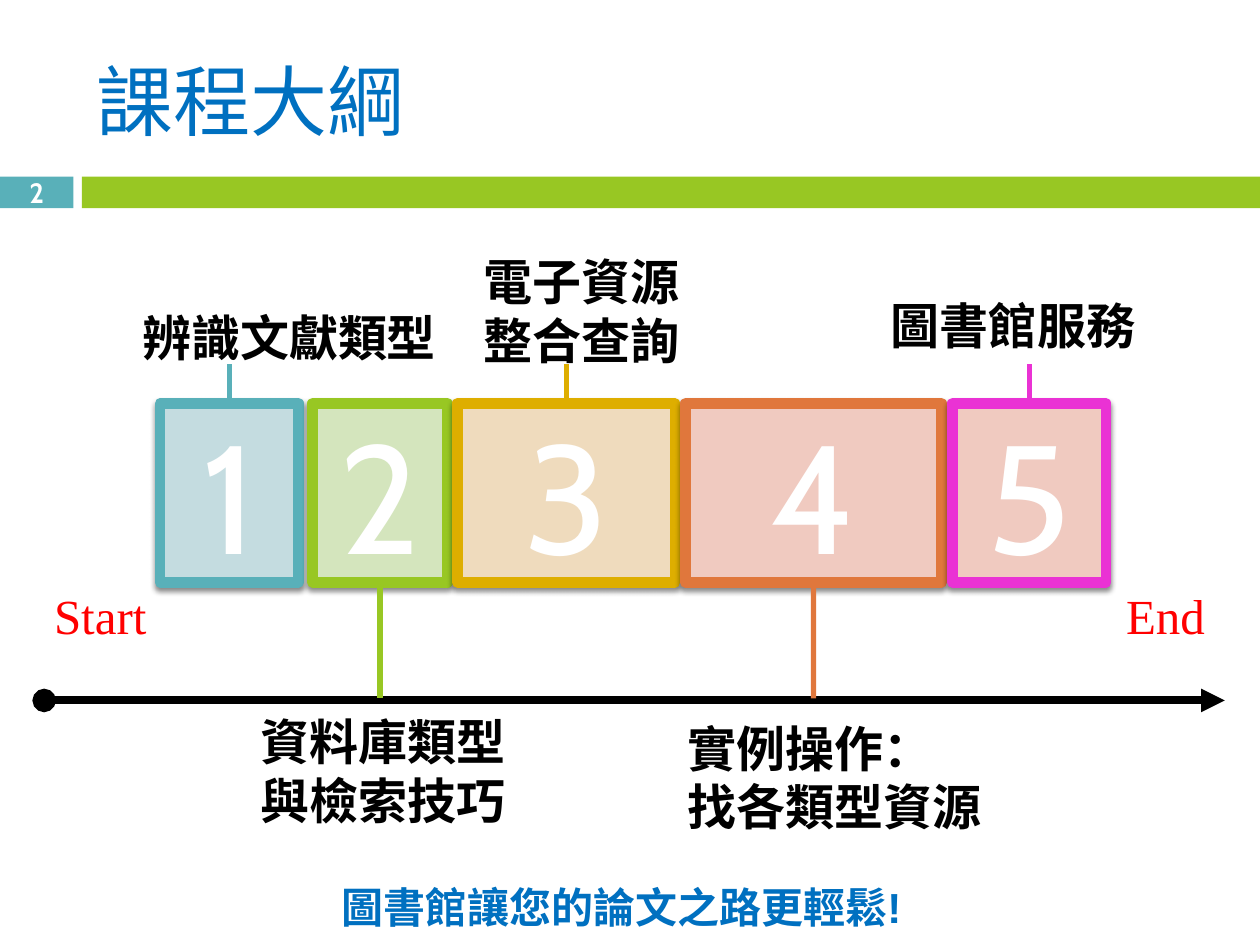
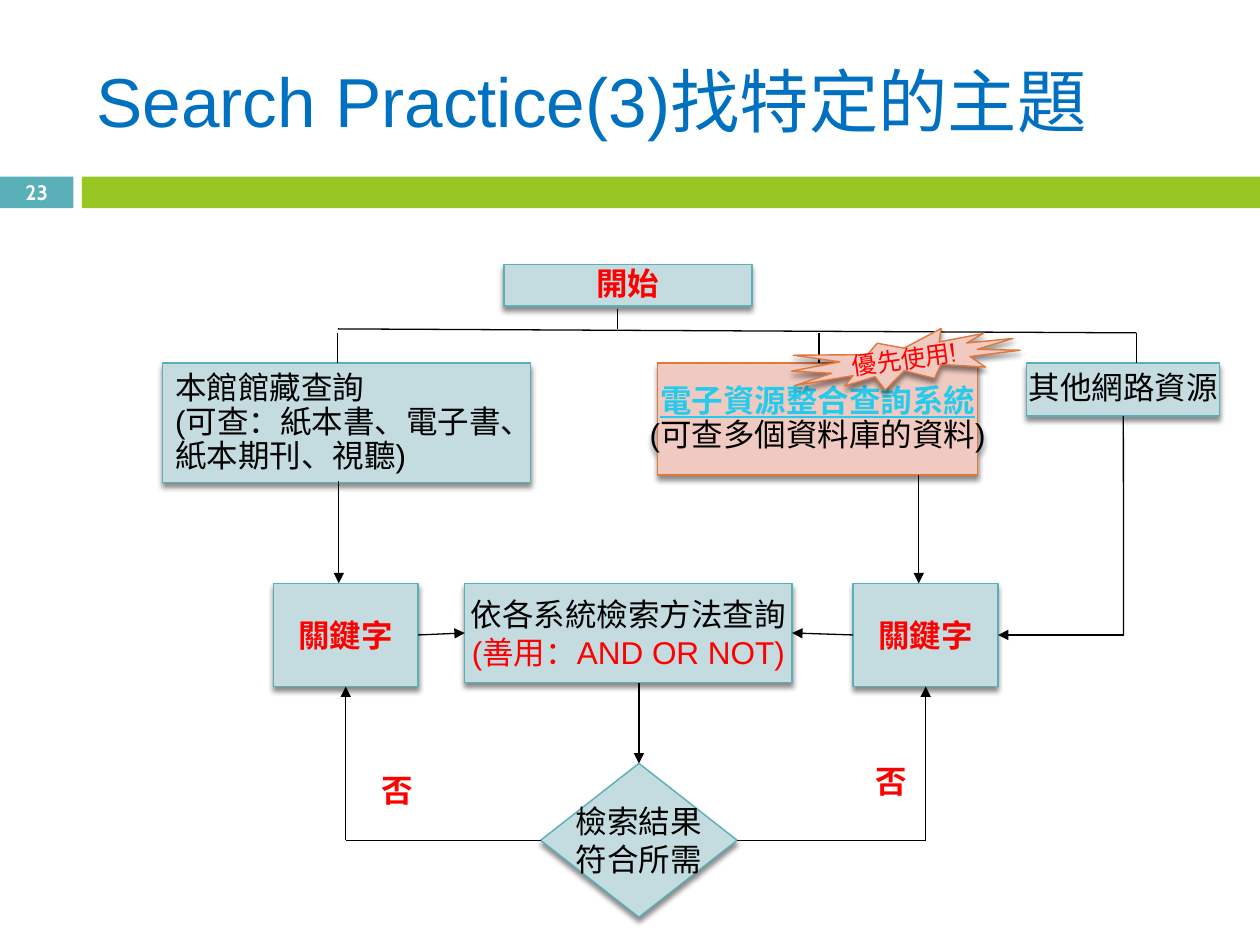
"""Build the course outline slide and the topic search flowchart slide."""
from lxml.etree import SubElement
from pptx import Presentation
from pptx.dml.color import RGBColor as RGB
from pptx.enum.shapes import MSO_CONNECTOR as CONN, MSO_SHAPE as SHAPE
from pptx.enum.text import MSO_ANCHOR as ANCHOR, MSO_AUTO_SIZE as AUTO, PP_ALIGN as ALIGN
from pptx.oxml.ns import qn
from pptx.util import Cm, Pt

C = {
    "black": "000000", "white": "FFFFFF", "red": "FF0000", "blue": "0070C0",
    "teal": "59B0B9", "green": "98C723", "gold": "DEAE00", "orange": "E0773C",
    "magenta": "EA32D4", "link": "26CBEC", "pale_teal": "C4DCE0",
    "pale_green": "D4E5BD", "pale_gold": "EFDBBD", "pale_orange": "F0CAC0",
}
CJK = "Noto Sans CJK SC"


def add_text(s, text, x, y, w, h, geom=None, fill=None, line=None, width=0.79,
             shadow=True, size=18, font="Arial", color="black", bold=False,
             align=ALIGN.LEFT, anchor=ANCHOR.MIDDLE, spacing=None,
             wrap=True, grow=False):
    box = Cm(x), Cm(y), Cm(w), Cm(h)
    if geom is None:
        sp = s.shapes.add_textbox(*box)
    else:
        sp = s.shapes.add_shape(geom, *box)
        sp.fill.solid()
        sp.fill.fore_color.rgb = RGB.from_string(C[fill])
        sp.shadow.inherit = False
        if line:
            sp.line.color.rgb = RGB.from_string(C[line])
            sp.line.width = Pt(width)
        else:
            sp.line.fill.background()
        if shadow:
            effects = sp.element.spPr.find(qn("a:effectLst"))
            outer = SubElement(effects, qn("a:outerShdw"), blurRad=str(Pt(3)),
                               dist=str(Pt(2.4)), dir="5400000", rotWithShape="0")
            tint = SubElement(outer, qn("a:srgbClr"), val=C["black"])
            SubElement(tint, qn("a:alpha"), val="45000")
    tf = sp.text_frame
    tf.word_wrap = wrap
    tf.vertical_anchor = anchor
    tf.auto_size = AUTO.SHAPE_TO_FIT_TEXT if grow else AUTO.NONE
    for i, words in enumerate(text.split("\n") if text else []):
        p = tf.add_paragraph() if i else tf.paragraphs[0]
        p.alignment = align
        if spacing:
            p.line_spacing = spacing
        r = p.add_run()
        r.text = words
        r.font.size = Pt(size)
        r.font.bold = bold
        r.font.name = font
        r.font.color.rgb = RGB.from_string(C[color])
        SubElement(r.font._element, qn("a:ea"), typeface=CJK)
    return sp


def add_line(s, x1, y1, x2, y2, color="black", width=0.75, start=None, end=None,
             head=None, tail=None):
    cn = s.shapes.add_connector(CONN.STRAIGHT, Cm(x1), Cm(y1), Cm(x2), Cm(y2))
    if start:
        cn.begin_connect(*start)
    if end:
        cn.end_connect(*end)
    cn.line.color.rgb = RGB.from_string(C[color])
    cn.line.width = Pt(width)
    for tag, kind in (("a:headEnd", head), ("a:tailEnd", tail)):
        if kind:
            SubElement(cn.line._ln, qn(tag), type=kind)
    SubElement(cn.element.spPr, qn("a:effectLst"))
    return cn


prs = Presentation()
prs.slide_width, prs.slide_height = Cm(25.4), Cm(19.05)

slides = []
for title, title_size, number, number_size in [
    ("課程大綱", 44, "2", 16),
    ("Search Practice(3)找特定的主題", 39.6, "23", 12),
]:
    s = prs.slides.add_slide(prs.slide_layouts[6])
    add_text(s, number, 0, 3.56, 1.48, 0.64, SHAPE.RECTANGLE, "teal", shadow=False,
             size=number_size, font="Cabin", color="white", bold=True,
             align=ALIGN.CENTER, wrap=False)
    add_text(s, "", 1.65, 3.56, 23.75, 0.64, SHAPE.RECTANGLE, "green", shadow=False)
    add_text(s, title, 1.7, 0.64, 22.66, 2.74, size=title_size, color="blue")
    slides.append(s)
outline, flow = slides

TOP, HEIGHT = 8.13, 3.61
add_line(outline, 0.89, 14.12, 24.69, 14.12, width=4.5, head="oval", tail="triangle")
for number, x, w, fill, color, label, lx, ly, lw, lh in [
    ("1", 3.23, 2.79, "pale_teal", "teal", "辨識文獻類型", 2.62, 6.07, 6.5, 1.45),
    ("2", 6.3, 2.72, "pale_green", "green", "資料庫類型\n與檢索技巧", 5, 14.22, 5.51, 2.64),
    ("3", 9.22, 4.39, "pale_gold", "gold", "電子資源\n整合查詢", 9.5, 4.95, 4.5, 2.64),
    ("4", 13.82, 5.16, "pale_orange", "orange", "實例操作：\n找各類型資源", 13.61, 14.35, 6.5, 2.64),
    ("5", 19.2, 3.1, "pale_orange", "magenta", "圖書館服務", 17.7, 5.84, 5.51, 1.45),
]:
    sp = add_text(outline, number, x, TOP, w, HEIGHT, SHAPE.RECTANGLE, fill, color, 6,
                  size=88, font="Cabin", color="white", align=ALIGN.CENTER)
    add_text(outline, label, lx, ly, lw, lh, size=28, font="Cabin", bold=True,
             anchor=ANCHOR.TOP, wrap=False, grow=True)
    above = ly < TOP
    mid = x + w / 2
    add_line(outline, mid, TOP, mid, 7.34 if above else 14.08, color, 3,
             start=(sp, 0 if above else 2))
for label, x in [("Start", 0.84), ("End", 22.45)]:
    add_text(outline, label, x, 11.68, 2.67, 1.45, size=28, font="Times New Roman",
             color="red", anchor=ANCHOR.TOP, grow=True)
add_text(outline, "圖書館讓您的論文之路更輕鬆!", 4.55, 17.65, 15.95, 1.27, size=24,
         color="blue", bold=True, align=ALIGN.CENTER, anchor=ANCHOR.TOP, grow=True)

node = dict(geom=SHAPE.RECTANGLE, fill="pale_teal", line="teal", wrap=False,
            align=ALIGN.CENTER)
accent = dict(node, fill="pale_orange", line="orange")
keyword = dict(node, font=CJK, color="red", bold=True)
add_text(flow, "開始", 10.16, 5.33, 5, 0.84, color="red", bold=True, spacing=0.9, **node)
add_text(flow, "本館館藏查詢\n(可查：紙本書、電子書、\n紙本期刊、視聽)", 3.28, 7.32, 7.42, 2.41,
         spacing=0.9, **dict(node, align=ALIGN.LEFT))
system = add_text(flow, "電子資源整合查詢系統\n(可查多個資料庫的資料)", 13.26, 7.32, 6.45, 2.26,
                  spacing=0.9, **accent)
f = system.text_frame.paragraphs[0].runs[0].font
f.bold = f.underline = True
f.color.rgb = RGB.from_string(C["link"])
web = add_text(flow, "其他網路資源", 20.7, 7.32, 3.89, 1.07, spacing=0.9, **node)
left_key = add_text(flow, "關鍵字", 5.51, 11.76, 2.92, 2.08, **keyword)
right_key = add_text(flow, "關鍵字", 17.2, 11.76, 2.92, 2.08, **keyword)
query = add_text(flow, "依各系統檢索方法查詢\n(善用：AND OR NOT)", 9.37, 11.76, 6.6, 2, **node)
query.text_frame.paragraphs[1].runs[0].font.color.rgb = RGB.from_string(C["red"])
result = add_text(flow, "檢索結果\n符合所需", 10.9, 15.39, 3.96, 3.1, font=CJK,
                  **dict(node, geom=SHAPE.FLOWCHART_DECISION))

add_line(flow, 12.45, 6.22, 12.45, 6.63)
add_line(flow, 6.81, 6.63, 22.91, 6.71)
for x in (6.81, 16.51, 22.91):
    add_line(flow, x, 6.71, x, 7.32)
for x, y1, y2 in [(6.83, 9.7, 11.76), (18.52, 9.58, 11.76)]:
    add_line(flow, x, y1, x, y2, tail="triangle")
add_line(flow, 12.88, 13.76, 12.88, 15.39, tail="triangle", end=(result, 0))
add_line(flow, 22.65, 8.39, 22.65, 12.8, start=(web, 2))
add_line(flow, 22.65, 12.8, 20.12, 12.8, tail="triangle", end=(right_key, 3))
add_line(flow, 8.43, 12.8, 9.37, 12.76, tail="triangle",
         start=(left_key, 3), end=(query, 1))
add_line(flow, 17.2, 12.8, 15.97, 12.76, tail="triangle",
         start=(right_key, 1), end=(query, 3))
for key, side, x, no_x, no_y in [
    (left_key, 1, 6.97, 7.36, 15.36),
    (right_key, 3, 18.66, 17.3, 15.18),
]:
    add_line(flow, x, 16.94, x, 16.94, start=(result, side))
    add_line(flow, x, 16.94, x, 13.84, tail="triangle", end=(key, 2))
    sp = add_text(flow, "否", no_x, no_y, 1.27, 0.91, font=CJK, color="red", bold=True,
                  align=ALIGN.CENTER)
    sp.element.txBody.bodyPr.set("vert", "eaVert")

burst = add_text(flow, "優先使用!", 15.95, 6.73, 4.62, 1.07, size=14, font="Cabin",
                 color="red", **dict(accent, geom=SHAPE.EXPLOSION1))
burst.rotation = 351.9

prs.save("out.pptx")
